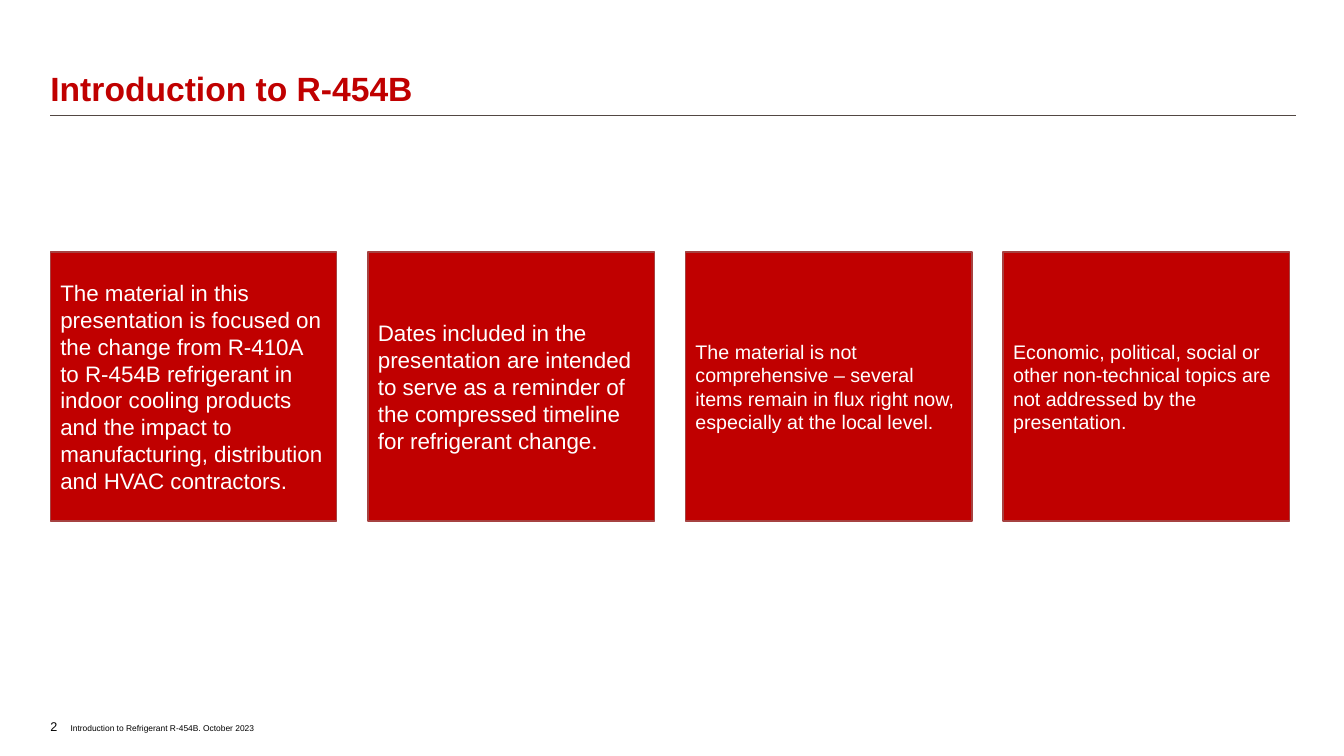
from pptx import Presentation
from pptx.dml.color import RGBColor
from pptx.enum.shapes import MSO_CONNECTOR, MSO_SHAPE
from pptx.enum.text import MSO_ANCHOR, PP_ALIGN
from pptx.oxml.ns import qn
from pptx.util import Inches, Pt
from lxml import etree

TOP, MIDDLE, BOTTOM = MSO_ANCHOR.TOP, MSO_ANCHOR.MIDDLE, MSO_ANCHOR.BOTTOM
LEFT = PP_ALIGN.LEFT
RECTANGLE = MSO_SHAPE.RECTANGLE
STRAIGHT = MSO_CONNECTOR.STRAIGHT
TITLE_ONLY = 5
FONT = "Arial"
RED, BORDER, GREY, WHITE, BLACK = "C00000", "A64241", "524743", "FFFFFF", "000000"
MARGIN, CARD_PITCH = 0.5, 3.15
CARDS = [
    ("The material in this presentation is focused on the change from R-410A "
     "to R-454B refrigerant in indoor cooling products and the impact to "
     "manufacturing, distribution and HVAC contractors.", 16),
    ("Dates included in the presentation are intended to serve as a reminder "
     "of the compressed timeline for refrigerant change.", 16),
    ("The material is not comprehensive – several items remain in flux right "
     "now, especially at the local level.", 14),
    ("Economic, political, social or other non-technical topics are not "
     "addressed by the presentation.", 14),
]


def color(value):
    """Turn a hex string into a colour."""
    return RGBColor.from_string(value)


def place(shape, left, top, width, height):
    """Set the position and size of a shape in inches."""
    shape.left, shape.top = Inches(left), Inches(top)
    shape.width, shape.height = Inches(width), Inches(height)


def write(shape, text, size, ink, anchor, bold=False):
    """Write one left-aligned paragraph into a shape."""
    frame = shape.text_frame
    frame.word_wrap = True
    frame.vertical_anchor = anchor
    para = frame.paragraphs[0]
    para.alignment = LEFT
    span = para.add_run()
    span.text = text
    span.font.name, span.font.size, span.font.bold = FONT, Pt(size), bold
    span.font.color.rgb = color(ink)
    return para


def clear_insets(shape):
    """Remove the inner margins of a text shape."""
    frame = shape.text_frame
    frame.margin_left = frame.margin_right = 0
    frame.margin_top = frame.margin_bottom = 0


def set_title(page, text):
    """Place and format the title placeholder."""
    title = page.shapes.title
    place(title, MARGIN, 0.21, 12.35, 0.87)
    clear_insets(title)
    write(title, text, 24, RED, BOTTOM, bold=True).line_spacing = 0.9


def add_rule(page):
    """Draw the thin line below the title."""
    rule = page.shapes.add_connector(
        STRAIGHT, Inches(MARGIN), Inches(1.15), Inches(12.85), Inches(1.15))
    rule.line.color.rgb = color(GREY)
    rule.line.width = Pt(0.75)
    etree.SubElement(rule._element.spPr, qn("a:effectLst"))


def add_label(page, text, size, anchor, left, top, width, height):
    """Add a small footer text box."""
    box = page.shapes.add_textbox(
        Inches(left), Inches(top), Inches(width), Inches(height))
    clear_insets(box)
    write(box, text, size, BLACK, anchor)


def add_card(page, text, size, left):
    """Add a red card with white text."""
    card = page.shapes.add_shape(
        RECTANGLE, Inches(left), Inches(2.5), Inches(2.84), Inches(2.67))
    card.shadow.inherit = False
    card.fill.solid()
    card.fill.fore_color.rgb = color(RED)
    card.line.color.rgb = color(BORDER)
    card.line.width = Pt(1)
    write(card, text, size, WHITE, MIDDLE)


def main():
    """Build the slide and save it."""
    deck = Presentation()
    deck.slide_width, deck.slide_height = Inches(13.33), Inches(7.5)
    page = deck.slides.add_slide(deck.slide_layouts[TITLE_ONLY])
    add_rule(page)
    add_label(page, "2", 9, MIDDLE, MARGIN, 7.09, 0.39, 0.24)
    add_label(page, "Introduction to Refrigerant R-454B. October 2023", 6, TOP,
              0.7, 7.17, 2.2, 0.1)
    set_title(page, "Introduction to R-454B")
    for index, (text, size) in enumerate(CARDS):
        add_card(page, text, size, MARGIN + index * CARD_PITCH)
    deck.save("out.pptx")


if __name__ == "__main__":
    main()
